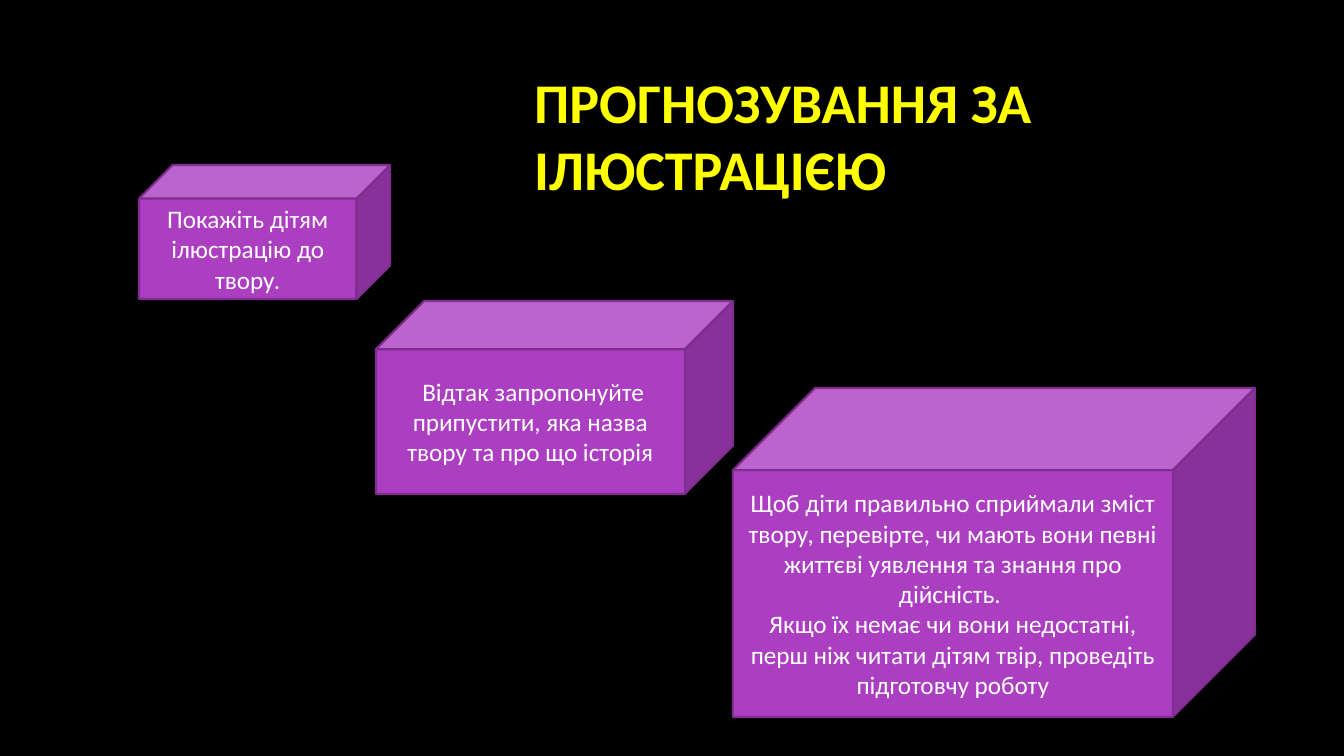
from pptx import Presentation
from pptx.dml.color import RGBColor as Rgb
from pptx.enum.shapes import MSO_SHAPE as Shape
from pptx.enum.text import MSO_ANCHOR as Anchor, MSO_AUTO_SIZE as Fit, PP_ALIGN as Align
from pptx.util import Pt

PX = 914400 / 100.8
HUES = {"back": "000000", "title": "FFFF00", "cube": "AC3EC1", "edge": "7F2E8F", "text": "FFFFFF"}


def emu(*nums):
    return [round(n * PX) for n in nums]


def style(frame, size, hue, align, bold=False):
    frame.word_wrap = True
    frame.auto_size = Fit.NONE
    frame.vertical_anchor = Anchor.MIDDLE
    for para in frame.paragraphs:
        para.alignment = align
        para.line_spacing = 1.0
        for run in para.runs:
            font = run.font
            font.name = "Calibri"
            font.size = Pt(size)
            font.bold = bold
            font.color.rgb = Rgb.from_string(HUES[hue])


# Slide and background
deck = Presentation()
deck.slide_width, deck.slide_height = emu(1344, 756)
slide = deck.slides.add_slide(deck.slide_layouts[5])
back = slide.background.fill
back.solid()
back.fore_color.rgb = Rgb.from_string(HUES["back"])

# Title
title = slide.shapes.title
title.left, title.top, title.width, title.height = emu(524, 100, 540, 69)
title.text_frame.text = "ПРОГНОЗУВАННЯ ЗА ІЛЮСТРАЦІЄЮ"
style(title.text_frame, 40, "title", Align.LEFT, True)

# Cubes that step down and grow
steps = [
    ((139, 165, 251, 134), "Покажіть дітям ілюстрацію до твору."),
    ((376, 301, 357, 193), " Відтак запропонуйте припустити, яка назва твору та про що історія"),
    ((733, 388, 522, 329),
     "Щоб діти правильно сприймали зміст твору, перевірте, чи мають вони певні "
     "життєві уявлення та знання про дійсність. \n"
     "Якщо їх немає чи вони недостатні, перш ніж читати дітям твір, "
     "проведіть підготовчу роботу"),
]
for box, text in steps:
    cube = slide.shapes.add_shape(Shape.CUBE, *emu(*box))
    cube.shadow.inherit = False
    cube.fill.solid()
    cube.fill.fore_color.rgb = Rgb.from_string(HUES["cube"])
    cube.line.color.rgb = Rgb.from_string(HUES["edge"])
    cube.line.width = Pt(1.5)
    cube.text_frame.text = text
    style(cube.text_frame, 18, "text", Align.CENTER)

deck.save("out.pptx")
